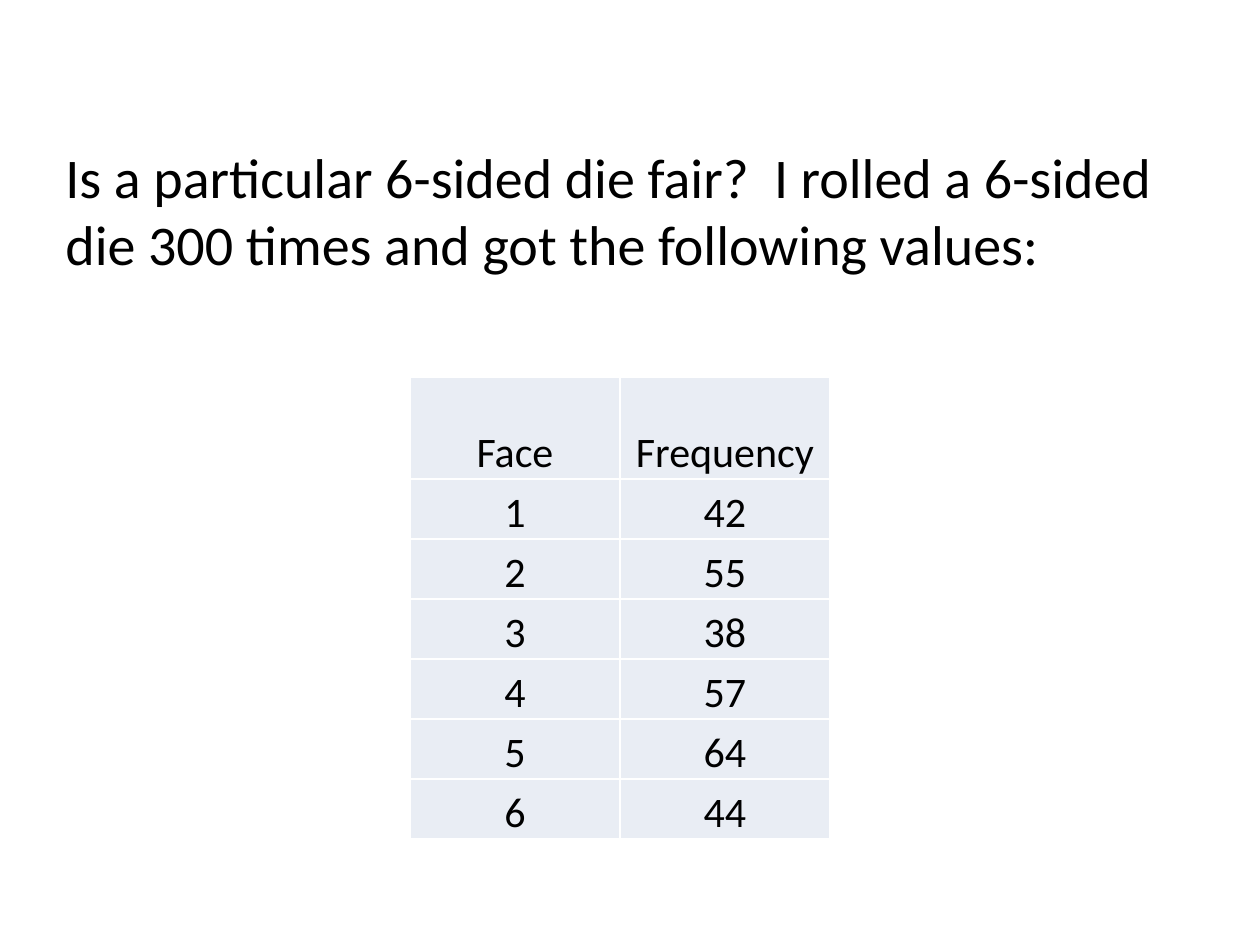
"""Build a slide asking whether a die is fair, with a table of roll frequencies."""
from lxml import etree
from pptx import Presentation
from pptx.dml.color import RGBColor
from pptx.enum.text import MSO_ANCHOR, PP_ALIGN
from pptx.oxml.ns import qn
from pptx.util import Pt

BLACK = RGBColor(0x00, 0x00, 0x00)
WHITE = RGBColor(0xFF, 0xFF, 0xFF)
PALE_BLUE = RGBColor(0xE9, 0xED, 0xF4)
LEFT, CENTER = PP_ALIGN.LEFT, PP_ALIGN.CENTER
MIDDLE, BOTTOM = MSO_ANCHOR.MIDDLE, MSO_ANCHOR.BOTTOM
PX_PER_INCH = 126


def px(length):
    return round(length * 914400 / PX_PER_INCH)


def write(frame, text, size, align):
    paragraph = frame.paragraphs[0]
    paragraph.alignment = align
    run = paragraph.add_run()
    run.text = text
    run.font.name = "Calibri"
    run.font.size = Pt(size)
    run.font.color.rgb = BLACK


presentation = Presentation()
presentation.slide_width = px(1260)
presentation.slide_height = px(945)
slide = presentation.slides.add_slide(presentation.slide_layouts[6])

question = slide.shapes.add_textbox(px(53), px(53), px(1165), px(388)).text_frame
question.word_wrap = True
question.vertical_anchor = MIDDLE
question.margin_bottom = px(81)
write(
    question,
    "Is a particular 6-sided die fair?  I rolled a 6-sided die 300 times "
    "and got the following values:",
    size=32,
    align=LEFT,
)

FREQUENCIES = [42, 55, 38, 57, 64, 44]
rolls = [("Face", "Frequency"), *enumerate(FREQUENCIES, start=1)]
HEADER_HEIGHT, ROW_HEIGHT, COLUMN_WIDTH = 102, 60, 210

roll_table = slide.shapes.add_table(
    len(rolls), 2, px(410), px(377), px(2 * COLUMN_WIDTH),
    px(HEADER_HEIGHT + ROW_HEIGHT * len(FREQUENCIES)),
).table
roll_table.first_row = False
roll_table.horz_banding = False
for column in roll_table.columns:
    column.width = px(COLUMN_WIDTH)

for row_index, roll in enumerate(rolls):
    roll_table.rows[row_index].height = px(ROW_HEIGHT if row_index else HEADER_HEIGHT)
    for column_index, value in enumerate(roll):
        cell = roll_table.cell(row_index, column_index)
        cell.vertical_anchor = BOTTOM
        cell.margin_left = cell.margin_right = cell.margin_top = px(1)
        cell.margin_bottom = 0
        write(cell.text_frame, str(value), size=24, align=CENTER)
        properties = cell._tc.get_or_add_tcPr()
        for side in ("lnL", "lnR", "lnT", "lnB"):
            border = etree.SubElement(properties, qn(f"a:{side}"), w=str(Pt(1)))
            border_fill = etree.SubElement(border, qn("a:solidFill"))
            etree.SubElement(border_fill, qn("a:srgbClr"), val=str(WHITE))
        cell.fill.solid()
        cell.fill.fore_color.rgb = PALE_BLUE

presentation.save("out.pptx")
